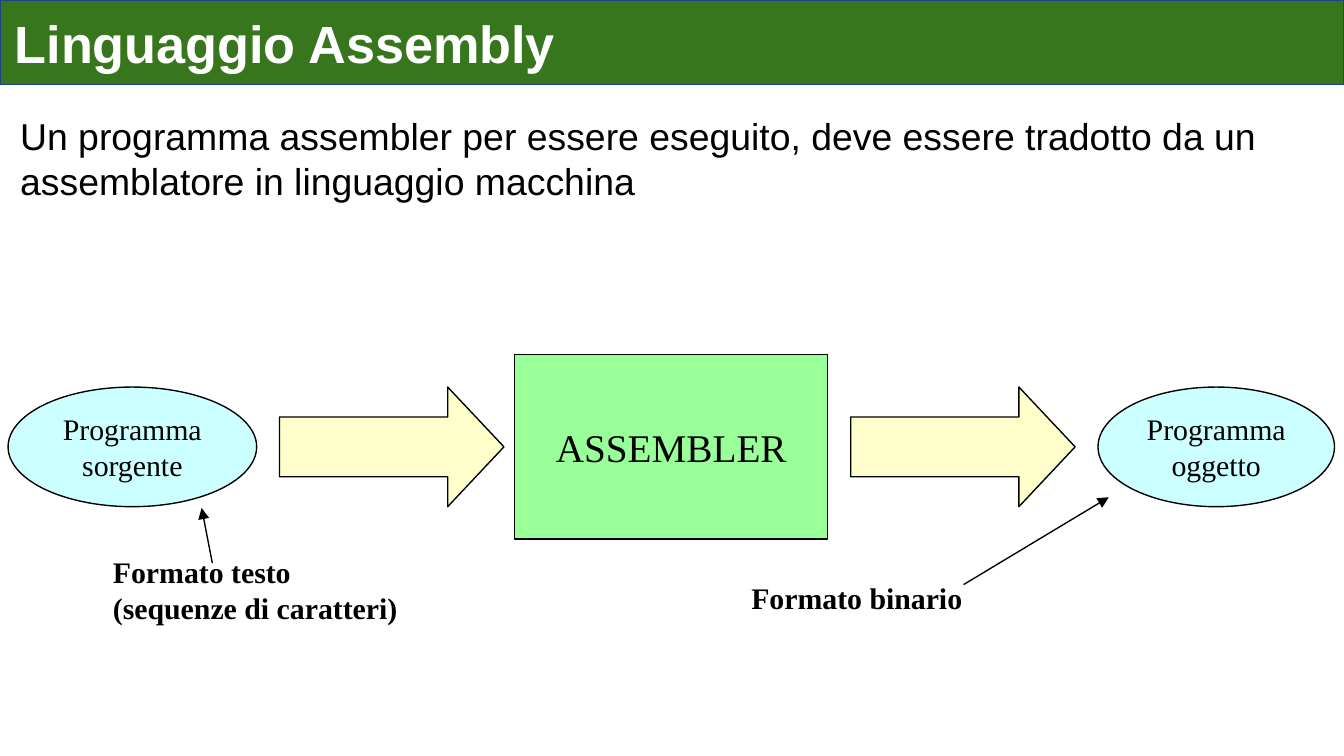
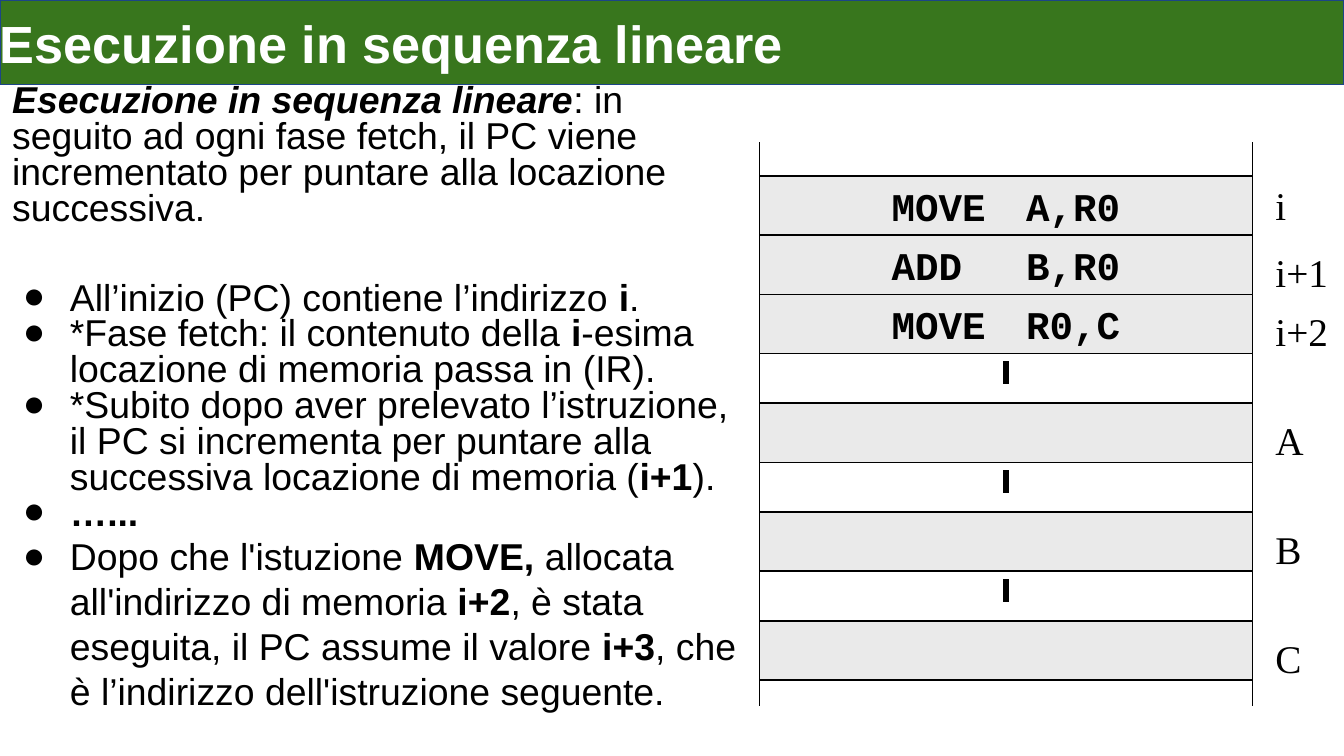
"""Build two slides on assembly language and linear execution."""
from dataclasses import dataclass
from typing import NamedTuple

from lxml.etree import SubElement
from pptx import Presentation
from pptx.dml.color import RGBColor as RGB
from pptx.enum.dml import MSO_LINE as Dash
from pptx.enum.shapes import MSO_CONNECTOR as Link, MSO_SHAPE as Kind
from pptx.enum.text import MSO_ANCHOR as Anchor, PP_ALIGN as Align
from pptx.oxml.ns import qn
from pptx.util import Inches, Pt


@dataclass(frozen=True)
class Theme:
    green: str = "38761D"
    navy: str = "1C4587"
    black: str = "000000"
    white: str = "FFFFFF"
    mint: str = "99FF99"
    cream: str = "FFFFCC"
    aqua: str = "CCFFFF"
    gray: str = "EAEAEA"
    sans: str = "Arial"
    serif: str = "Times New Roman"
    mono: str = "Courier New"
    head: int = 28
    large: int = 21
    body: int = 20
    small: int = 16
    thin: float = 0.75
    thick: float = 3


T = Theme()


class Area(NamedTuple):
    left: float
    top: float
    width: float
    height: float


class Type(NamedTuple):
    font: str
    size: int
    color: str = T.black
    bold: bool = False


class Node(NamedTuple):
    kind: Kind
    area: Area
    fill: str
    text: str = ""
    style: Type = Type(T.serif, T.large)


class Label(NamedTuple):
    area: Area
    text: str
    style: Type


class Line(NamedTuple):
    start: tuple[float, float]
    end: tuple[float, float]
    arrow: bool = False
    dashed: bool = False


class Item(NamedTuple):
    text: str
    bullet: bool = True
    italic: bool = False
    before: float = 0
    pitch: float = 0.8


TITLE = Type(T.sans, T.head, T.white, True)
BODY = Type(T.sans, T.body)
SERIF = Type(T.serif, T.large)
SMALL = Type(T.serif, T.small)
NOTE = Type(T.serif, T.small, bold=True)
CODE = Type(T.mono, T.large, bold=True)

NODES = [
    Node(Kind.RECTANGLE, Area(3.83, 2.64, 2.33, 1.37), T.mint, "ASSEMBLER"),
    Node(Kind.OVAL, Area(0.06, 2.88, 1.85, 0.89), T.aqua, "Programma\nsorgente", SMALL),
    Node(Kind.OVAL, Area(8.17, 2.88, 1.76, 0.89), T.aqua, "Programma\noggetto", SMALL),
]
NOTES = [
    Label(Area(0.75, 4.08, 2.39, 0.53), "Formato testo\n(sequenze di caratteri)", NOTE),
    Label(Area(5.5, 4.27, 1.82, 0.3), "Formato binario", NOTE),
]
LINKS = [
    Line((1.58, 4.19), (1.5, 3.78), arrow=True),
    Line((7.17, 4.35), (8.25, 3.7), arrow=True),
]
INTRO = [Item("Un programma assembler per essere eseguito, deve essere tradotto "
              "da un assemblatore in linguaggio macchina", bullet=False, before=6, pitch=1)]
STEPS = [
    Item("|Esecuzione in sequenza lineare|: in seguito ad ogni fase fetch, il PC viene "
         "incrementato per puntare alla locazione successiva.", bullet=False, italic=True),
    Item("All’inizio (PC) contiene l’indirizzo |i|.", before=29),
    Item("*Fase fetch: il contenuto della |i|-esima locazione di memoria passa in (IR)."),
    Item("*Subito dopo aver prelevato l’istruzione, il PC si incrementa per puntare "
         "alla successiva locazione di memoria (|i+1|)."),
    Item("|…...|"),
    Item("Dopo che l'istuzione |MOVE, |allocata all'indirizzo di memoria |i+2|, è stata "
         "eseguita, il PC assume il valore |i+3|, che è l’indirizzo dell'istruzione "
         "seguente.", pitch=1),
]
CODES = [("MOVE\tA,R0", "i"), ("ADD\tB,R0", "i+1"), ("MOVE\tR0,C", "i+2")]
VARS = ["A", "B", "C"]
LEFT, WIDTH, ROW, GAP = 5.65, 3.67, 0.44, 0.37
FIRST = 1.31


def place(area: Area) -> list:
    """Turn an area into lengths."""
    return [Inches(n) for n in area]


def style(para, look: Type) -> None:
    """Format every run of a paragraph."""
    for run in para.runs:
        font = run.font
        font.name, font.size, font.bold = look.font, Pt(look.size), look.bold
        font.color.rgb = RGB.from_string(look.color)


def setup(frame, anchor: Anchor = Anchor.TOP) -> None:
    """Set wrapping, anchor and margins of a text frame."""
    frame.word_wrap = True
    frame.vertical_anchor = anchor
    frame.margin_left = frame.margin_right = Inches(0.09)
    frame.margin_top = frame.margin_bottom = Inches(0.04)


def write(frame, text: str, look: Type, align: Align) -> None:
    """Fill a frame with text in one style."""
    frame.text = text
    for para in frame.paragraphs:
        para.alignment = align
        style(para, look)


def draw_node(slide, node: Node, edge: str = T.black):
    """Draw a filled shape with centred text."""
    shape = slide.shapes.add_shape(node.kind, *place(node.area))
    shape.shadow.inherit = False
    shape.fill.solid()
    shape.fill.fore_color.rgb = RGB.from_string(node.fill)
    shape.line.color.rgb = RGB.from_string(edge)
    shape.line.width = Pt(T.thin)
    setup(shape.text_frame, Anchor.MIDDLE)
    if node.text:
        write(shape.text_frame, node.text, node.style, Align.CENTER)
    return shape


def draw_label(slide, label: Label) -> None:
    """Draw plain text."""
    frame = slide.shapes.add_textbox(*place(label.area)).text_frame
    setup(frame)
    write(frame, label.text, label.style, Align.LEFT)


def draw_line(slide, line: Line) -> None:
    """Draw a line, dashed or with an arrowhead if asked."""
    ends = [Inches(n) for n in (*line.start, *line.end)]
    link = slide.shapes.add_connector(Link.STRAIGHT, *ends)
    link.line.color.rgb = RGB.from_string(T.black)
    link.line.width = Pt(T.thick if line.dashed else T.thin)
    if line.dashed:
        link.line.dash_style = Dash.DASH_DOT
    if line.arrow:
        SubElement(link.line._get_or_add_ln(), qn("a:tailEnd"), type="triangle")
    SubElement(link._element.spPr, qn("a:effectLst"))


def draw_title(slide, text: str, inset: float = 0) -> None:
    """Draw the title band."""
    band = Node(Kind.RECTANGLE, Area(0, 0, 10, 0.63), T.green, text, TITLE)
    frame = draw_node(slide, band, T.navy).text_frame
    frame.margin_left = Inches(inset)
    frame.margin_right = frame.margin_top = frame.margin_bottom = 0
    frame.paragraphs[0].alignment = Align.LEFT


def add_bullet(para) -> None:
    """Give a paragraph a hanging round bullet."""
    props = para._p.get_or_add_pPr()
    props.set("marL", str(Inches(0.43)))
    props.set("indent", str(Inches(-0.35)))
    color = SubElement(props, qn("a:buClr"))
    SubElement(color, qn("a:srgbClr"), val=T.black)
    SubElement(props, qn("a:buFont"), typeface=T.sans)
    SubElement(props, qn("a:buChar"), char="●")


def draw_items(slide, area: Area, items: list[Item]) -> None:
    """Draw paragraphs whose parts between bars are bold."""
    frame = slide.shapes.add_textbox(*place(area)).text_frame
    setup(frame)
    for num, item in enumerate(items):
        para = frame.add_paragraph() if num else frame.paragraphs[0]
        para.line_spacing = item.pitch
        para.space_before = Pt(item.before)
        if item.bullet:
            add_bullet(para)
        parts = item.text.split("|")
        for text in filter(None, parts):
            para.add_run().text = text
        style(para, BODY)
        marks = [pos % 2 == 1 for pos, text in enumerate(parts) if text]
        for run, bold in zip(para.runs, marks):
            run.font.bold = bold
            run.font.italic = bold and item.italic


def draw_flow(slide) -> None:
    """Draw the slide on translation into machine code."""
    for node in NODES:
        draw_node(slide, node)
    for left in (2.08, 6.33):
        arrow = draw_node(slide, Node(Kind.RIGHT_ARROW, Area(left, 2.88, 1.67, 0.89), T.cream))
        arrow.adjustments[0], arrow.adjustments[1] = 0.5, 0.47
    for line in LINKS:
        draw_line(slide, line)
    for note in NOTES:
        draw_label(slide, note)
    draw_items(slide, Area(0.06, 0.8, 9.86, 1.42), INTRO)
    draw_title(slide, "Linguaggio Assembly", 0.11)


def draw_cell(slide, top: float, code: str, tag: str, drop: float) -> None:
    """Draw one memory cell and its address."""
    draw_node(slide, Node(Kind.RECTANGLE, Area(LEFT, top, WIDTH, ROW), T.gray, code, CODE))
    draw_label(slide, Label(Area(9.4, top + drop, 0.6, 0.38), tag, SERIF))


def draw_memory(slide) -> None:
    """Draw the slide on linear execution."""
    for side in (LEFT, LEFT + WIDTH):
        draw_line(slide, Line((side, 1.06), (side, 5.25)))
    for num, (code, tag) in enumerate(CODES):
        draw_cell(slide, FIRST + num * ROW, code, tag, 0.06 if num else 0)
    last, mid = FIRST + 2 * ROW, LEFT + WIDTH / 2
    for num, tag in enumerate(VARS):
        top = last + num * (ROW + GAP)
        draw_line(slide, Line((mid, top + 0.5), (mid, top + 0.75), dashed=True))
        draw_cell(slide, top + ROW + GAP, "", tag, 0.06)
    draw_items(slide, Area(0, 0.59, 5.65, 5.01), STEPS)
    draw_title(slide, "Esecuzione in sequenza lineare")


def main() -> None:
    """Build and save the deck."""
    deck = Presentation()
    deck.slide_width, deck.slide_height = Inches(10), Inches(10 * 9 / 16)
    for draw in (draw_flow, draw_memory):
        draw(deck.slides.add_slide(deck.slide_layouts[6]))
    deck.save("out.pptx")


if __name__ == "__main__":
    main()
